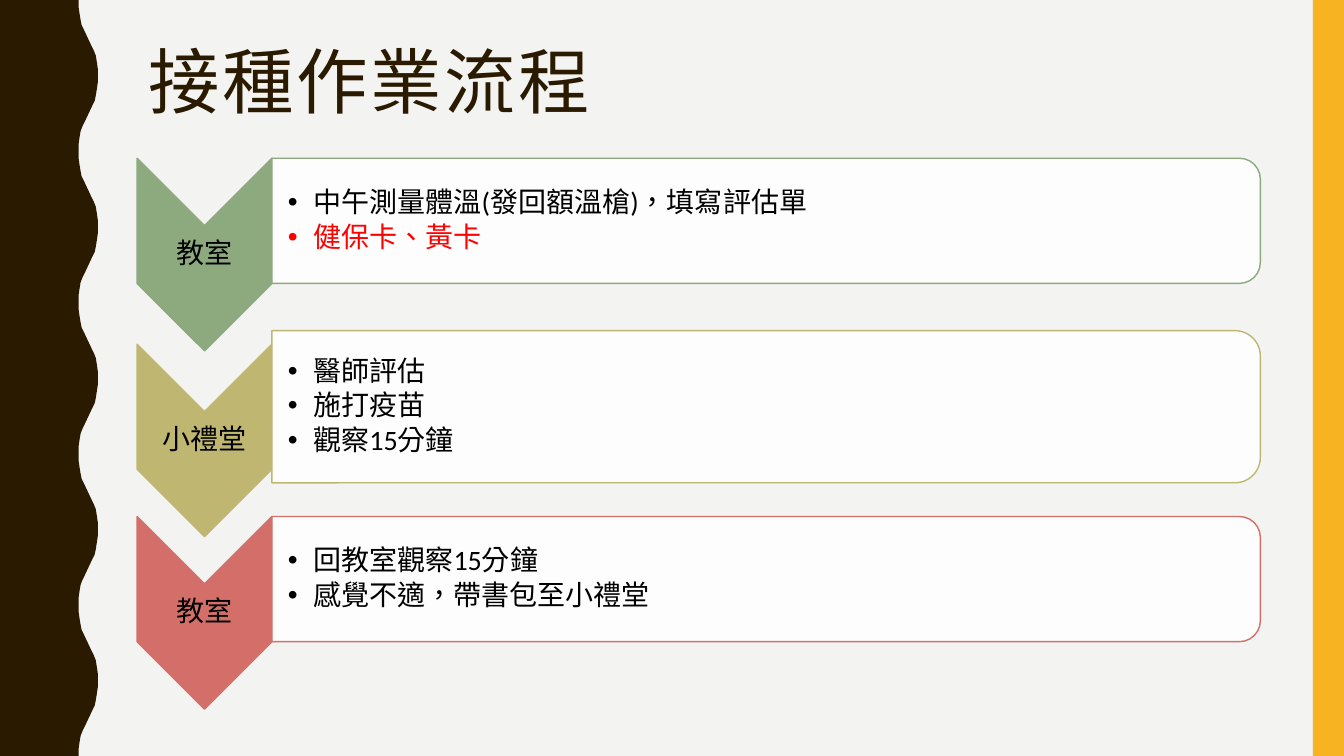
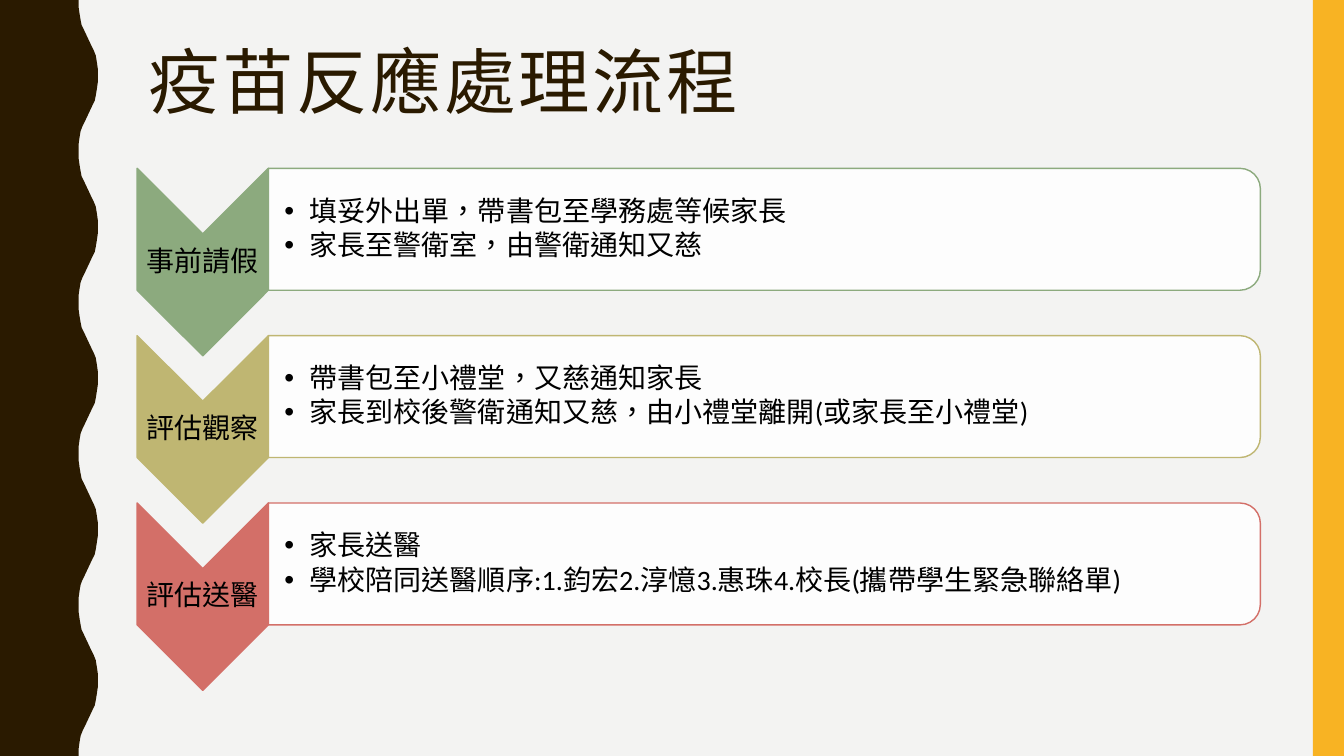
"""Build the vaccination workflow slides."""
from dataclasses import dataclass

from lxml import etree
from pptx import Presentation
from pptx import util as u
from pptx.dml.color import RGBColor
from pptx.enum import lang, shapes, text
from pptx.oxml import ns


@dataclass(frozen=True)
class Theme:
    background: str = "F3F3F2"
    dark: str = "2A1A00"
    accent: str = "F8B323"
    panel: str = "FFFFFF"
    body: str = "000000"
    alert: str = "FF0000"
    steps: tuple[str, ...] = ("8CAA7E", "BFB672", "D36F68")
    title_font: str = "Roboto Condensed"
    body_font: str = "Calibri"
    title_size: float = 51
    body_size: float = 20


@dataclass(frozen=True)
class Box:
    left: float
    top: float
    width: float
    height: float

    def lengths(self) -> list[int]:
        return [u.Inches(value) for value in (self.left, self.top, self.width, self.height)]


@dataclass(frozen=True)
class Line:
    text: str
    color: str = Theme.body


@dataclass(frozen=True)
class Step:
    label: str
    lines: tuple[Line, ...]
    panel_height: float | None = None


@dataclass(frozen=True)
class Flow:
    title: str
    top: float
    chevron_height: float
    steps: tuple[Step, ...]


THEME = Theme()
WIDTH, HEIGHT = 13.33, 7.5
FLOW_LEFT, FLOW_RIGHT = 1.36, 12.5
ROW_OVERLAP = 0.2
HALF_WAVE = 0.75
WAVE_MIN, WAVE_MAX = 0.78, 0.97
WAVE_POINTS = ((0.78, 0), (0.78, 0.07), (0.79, 0.14), (0.8, 0.2), (0.81, 0.25), (0.83, 0.29),
               (0.91, 0.46), (0.93, 0.5), (0.95, 0.55), (0.96, 0.61), (0.97, 0.68))

FLOWS = (
    Flow("接種作業流程", 1.57, 1.91, (
        Step("教室", (Line("中午測量體溫(發回額溫槍)，填寫評估單"),
                    Line("健保卡、黃卡", THEME.alert))),
        Step("小禮堂", (Line("醫師評估"), Line("施打疫苗"), Line("觀察15分鐘")), 1.51),
        Step("教室", (Line("回教室觀察15分鐘"), Line("感覺不適，帶書包至小禮堂"))),
    )),
    Flow("疫苗反應處理流程", 1.67, 1.86, (
        Step("事前請假", (Line("填妥外出單，帶書包至學務處等候家長"),
                      Line("家長至警衛室，由警衛通知又慈"))),
        Step("評估觀察", (Line("帶書包至小禮堂，又慈通知家長"),
                      Line("家長到校後警衛通知又慈，由小禮堂離開(或家長至小禮堂)"))),
        Step("評估送醫", (Line("家長送醫"),
                      Line("學校陪同送醫順序:1.鈞宏2.淳憶3.惠珠4.校長(攜帶學生緊急聯絡單)"))),
    )),
)


def paint(shape, fill: str, line: str | None = None, alpha: int | None = None) -> None:
    """Set the fill, outline and opacity percentage of a shape."""
    shape.shadow.inherit = False
    shape.fill.solid()
    shape.fill.fore_color.rgb = RGBColor.from_string(fill)
    if alpha is not None:
        color = shape._element.spPr.find(".//" + ns.qn("a:srgbClr"))
        etree.SubElement(color, ns.qn("a:alpha")).set("val", str(alpha * 1000))
    if line is None:
        shape.line.fill.background()
    else:
        shape.line.color.rgb = RGBColor.from_string(line)
        shape.line.width = u.Pt(1)


def add_bullet(paragraph) -> None:
    """Give a paragraph a hanging bullet."""
    properties = paragraph._p.get_or_add_pPr()
    properties.set("marL", str(u.Inches(0.25)))
    properties.set("indent", str(-u.Inches(0.25)))
    etree.SubElement(properties, ns.qn("a:buFont")).set("typeface", "Arial")
    etree.SubElement(properties, ns.qn("a:buChar")).set("char", "•")


def add_text(slide, box: Box, lines: tuple[Line, ...], *, font: str = THEME.body_font,
             size: float = THEME.body_size, anchor=text.MSO_ANCHOR.MIDDLE,
             align=text.PP_ALIGN.LEFT, insets: tuple[float, ...] = (0.01, 0.01, 0.01, 0.01),
             bullets: bool = False, space_after: float = 0, tracking: float = 0) -> None:
    """Add a wrapped text box with one paragraph per line."""
    frame = slide.shapes.add_textbox(*box.lengths()).text_frame
    frame.word_wrap = True
    frame.vertical_anchor = anchor
    (frame.margin_left, frame.margin_top,
     frame.margin_right, frame.margin_bottom) = map(u.Inches, insets)
    for index, line in enumerate(lines):
        paragraph = frame.add_paragraph() if index else frame.paragraphs[0]
        paragraph.alignment = align
        paragraph.line_spacing = 0.9
        paragraph.space_after = u.Pt(space_after)
        if bullets:
            add_bullet(paragraph)
        run = paragraph.add_run()
        run.text = line.text
        run.font.name = font
        run.font.size = u.Pt(size)
        run.font.color.rgb = RGBColor.from_string(line.color)
        run.font.language_id = lang.MSO_LANGUAGE_ID.TRADITIONAL_CHINESE
        if tracking:
            run._r.get_or_add_rPr().set("spc", str(int(tracking * 100)))


def add_turned_shape(slide, kind, box: Box):
    """Add a shape turned by 90 degrees that covers the given box."""
    shift = (box.width - box.height) / 2
    frame = Box(box.left + shift, box.top - shift, box.height, box.width)
    shape = slide.shapes.add_shape(kind, *frame.lengths())
    shape.rotation = 90
    return shape


def add_wave(slide) -> None:
    """Draw the wavy band along the left edge."""
    points = [(WAVE_MIN + WAVE_MAX - x if half % 2 else x, half * HALF_WAVE + y)
              for half in range(round(HEIGHT / HALF_WAVE)) for x, y in WAVE_POINTS]
    points += [(WAVE_MIN, HEIGHT), (0, HEIGHT)]
    builder = slide.shapes.build_freeform(0, 0)
    builder.add_line_segments([(u.Inches(x), u.Inches(y)) for x, y in points], close=True)
    paint(builder.convert_to_shape(), THEME.dark)


def add_base(presentation, title: str):
    """Add a slide with the shared background, bands and title."""
    slide = presentation.slides.add_slide(presentation.slide_layouts[6])
    slide.background.fill.solid()
    slide.background.fill.fore_color.rgb = RGBColor.from_string(THEME.background)
    add_wave(slide)
    band = Box(13.02, 0, WIDTH - 13.02, HEIGHT)
    paint(slide.shapes.add_shape(shapes.MSO_SHAPE.RECTANGLE, *band.lengths()), THEME.accent)
    add_text(slide, Box(1.37, 0.42, 11.13, 1.63), (Line(title, THEME.dark),),
             font=THEME.title_font, size=THEME.title_size, anchor=text.MSO_ANCHOR.TOP,
             insets=(0.1, 0.05, 0.1, 0.05), tracking=2)
    return slide


def add_step(slide, step: Step, top: float, chevron_height: float, color: str) -> float:
    """Draw one step and return the bottom of its chevron."""
    width = 0.7 * chevron_height
    body_height = 0.65 * chevron_height
    panel_height = step.panel_height or body_height
    chevron_top = top + (panel_height - body_height) / 2
    chevron = Box(FLOW_LEFT, chevron_top, width, chevron_height)
    label = Box(FLOW_LEFT, chevron_top + 0.35 * chevron_height, width, 0.3 * chevron_height)
    panel = Box(FLOW_LEFT + width, top, FLOW_RIGHT - FLOW_LEFT - width, panel_height)
    paint(add_turned_shape(slide, shapes.MSO_SHAPE.CHEVRON, chevron), color, color)
    add_text(slide, label, (Line(step.label),), align=text.PP_ALIGN.CENTER)
    paint(add_turned_shape(slide, shapes.MSO_SHAPE.ROUND_2_SAME_RECTANGLE, panel),
          THEME.panel, color, alpha=90)
    add_text(slide, panel, step.lines, insets=(0.16, 0.01, 0.01, 0.01),
             bullets=True, space_after=3)
    return chevron_top + chevron_height


def add_flow(presentation, flow: Flow) -> None:
    """Add a slide with its column of steps."""
    slide = add_base(presentation, flow.title)
    top = flow.top
    for step, color in zip(flow.steps, THEME.steps):
        top = add_step(slide, step, top, flow.chevron_height, color) - ROW_OVERLAP


def main() -> None:
    """Build and save the presentation."""
    presentation = Presentation()
    presentation.slide_width = u.Inches(WIDTH)
    presentation.slide_height = u.Inches(HEIGHT)
    for flow in FLOWS:
        add_flow(presentation, flow)
    presentation.save("out.pptx")


if __name__ == "__main__":
    main()
